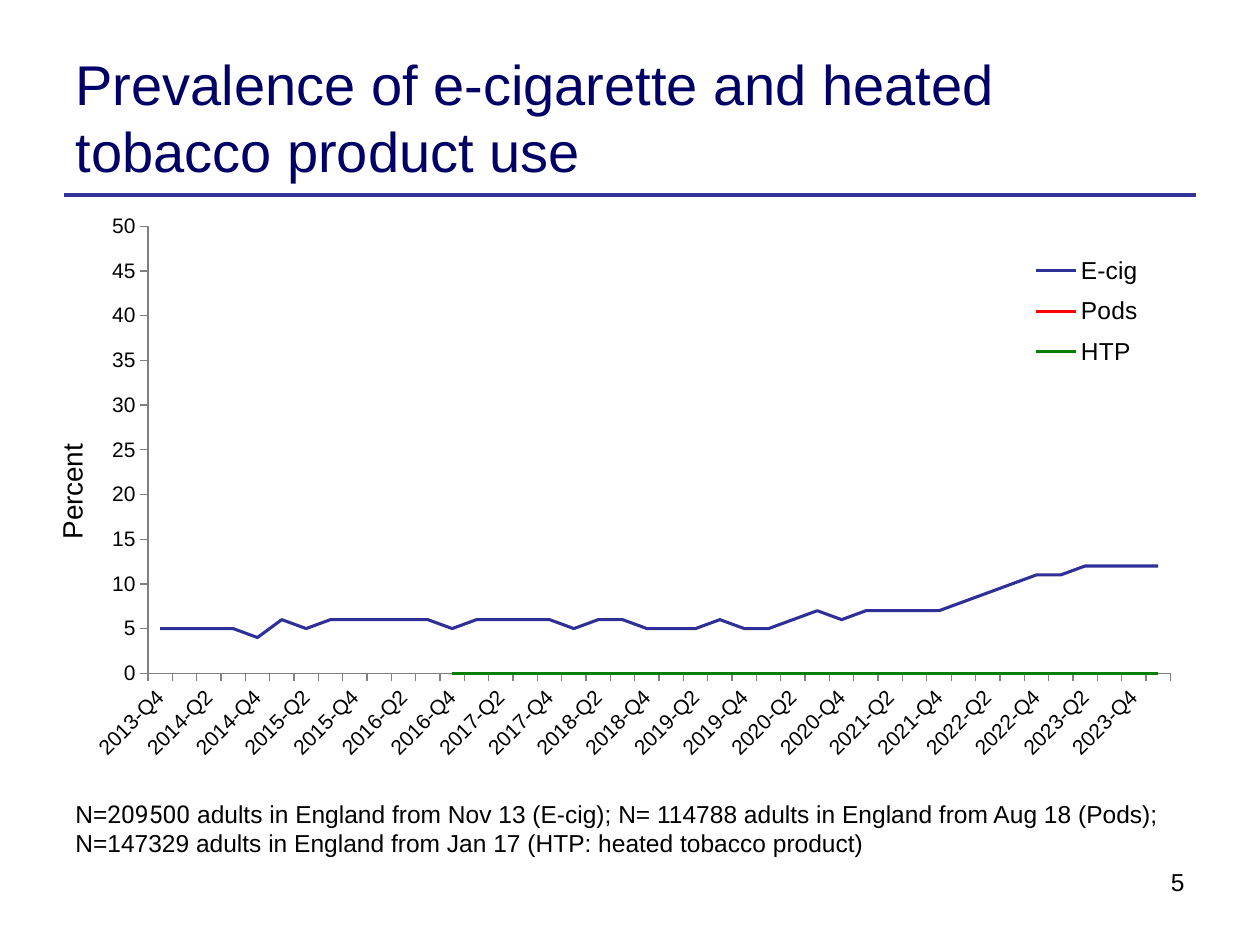
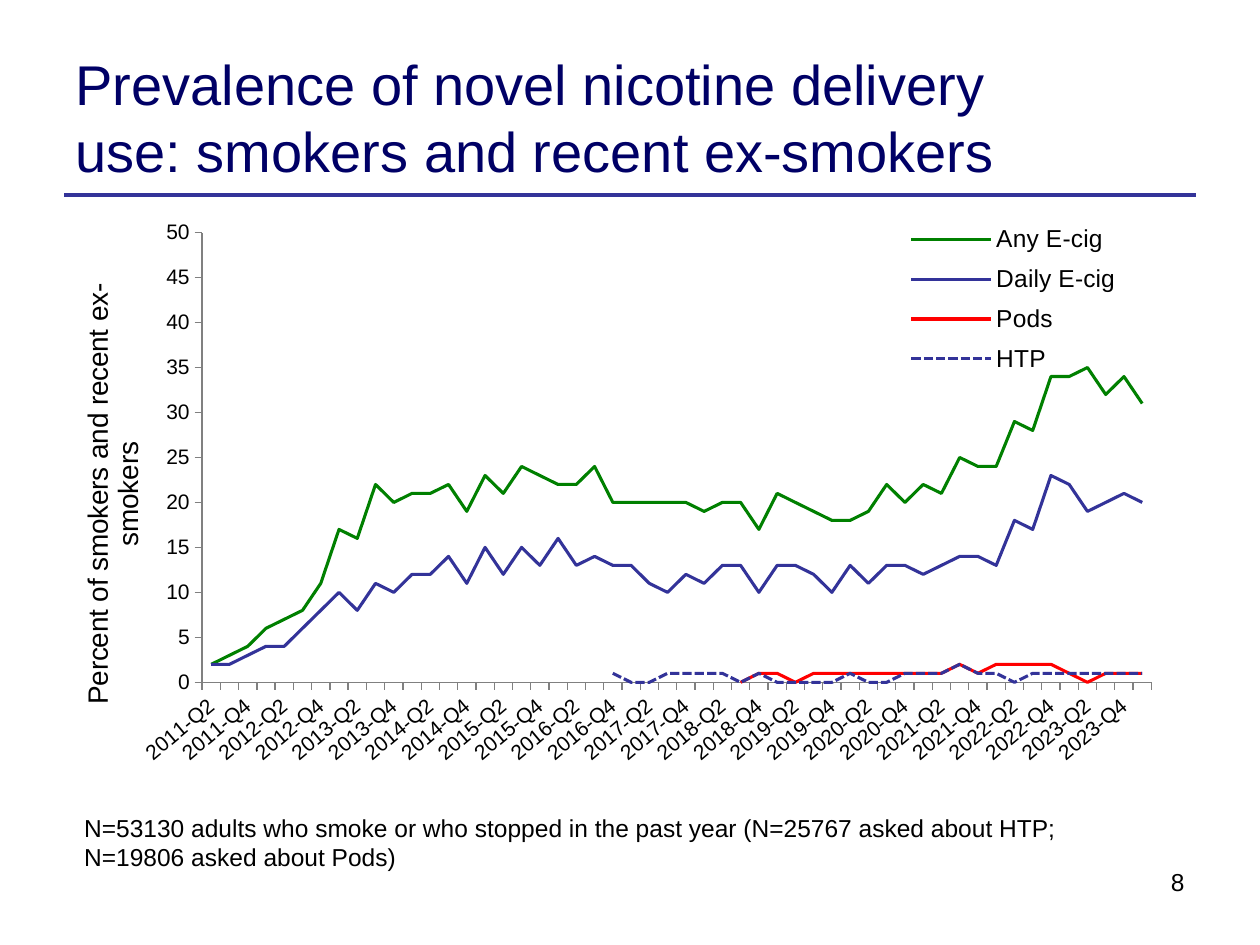
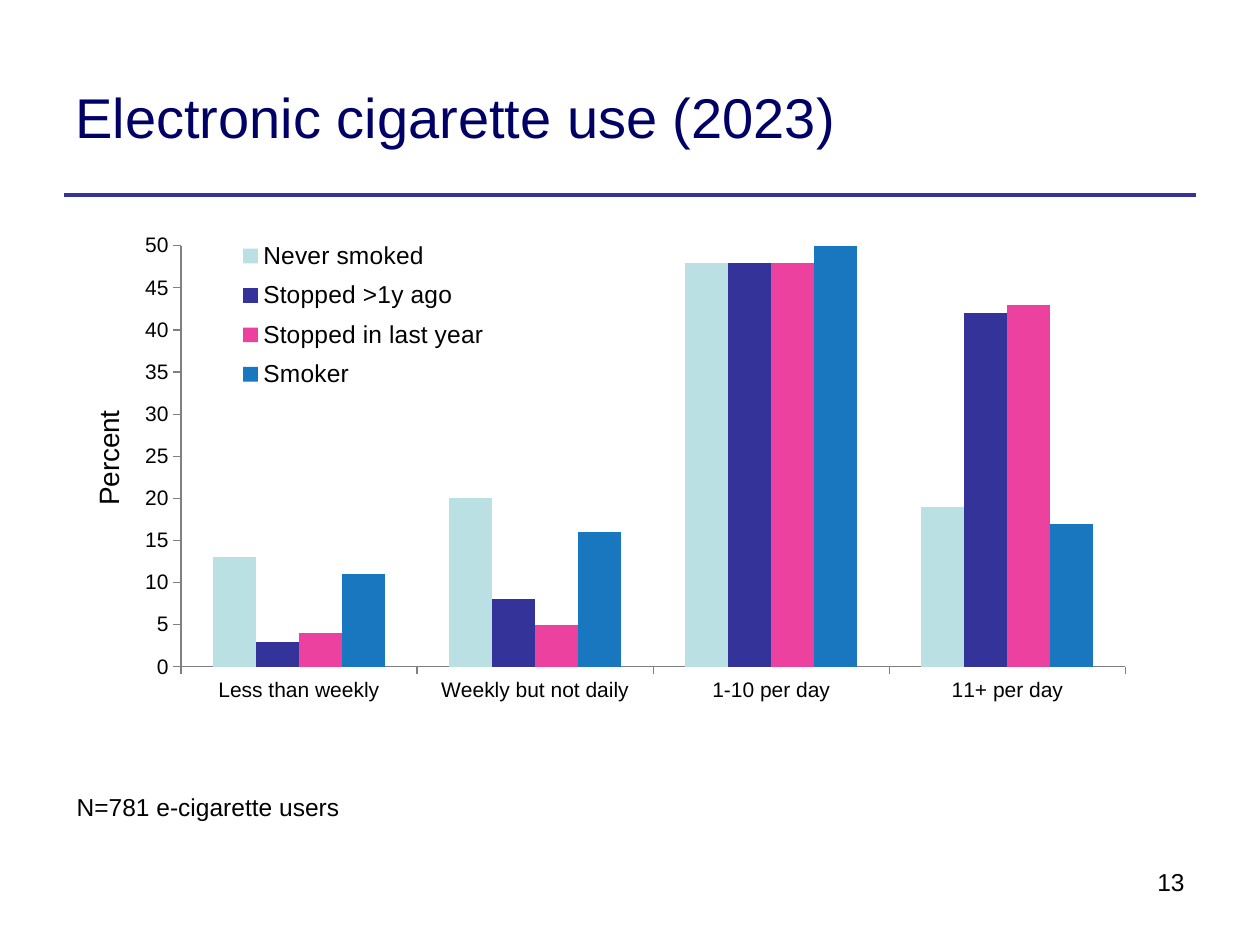
from dataclasses import dataclass

from pptx import Presentation
from pptx.chart.data import CategoryChartData
from pptx.dml.color import RGBColor
from pptx.enum.chart import XL_CHART_TYPE, XL_LEGEND_POSITION, XL_TICK_MARK
from pptx.enum.dml import MSO_LINE
from pptx.enum.shapes import MSO_CONNECTOR
from pptx.enum.text import MSO_ANCHOR, MSO_AUTO_SIZE, PP_ALIGN
from pptx.oxml.ns import qn
from pptx.oxml.xmlchemy import OxmlElement
from pptx.util import Pt


@dataclass(frozen=True)
class Theme:
    font: str = "Arial"
    figure_font: str = "Roboto"
    title: str = "000066"
    text: str = "000000"
    axis: str = "808080"
    indigo: str = "333399"
    deep_indigo: str = "2F2F98"
    red: str = "FF0000"
    green: str = "008000"
    pale_teal: str = "BBE0E3"
    pink: str = "EC419F"
    blue: str = "1977C0"
    title_size: float = 32
    chart_size: float = 18
    axis_title_size: float = 16
    body_size: float = 14
    tick_size: float = 12
    rule_width: float = 2.25
    series_width: float = 1.75


THEME = Theme()


@dataclass(frozen=True)
class Series:
    name: str
    values: list
    color: str
    dash: MSO_LINE = None


def rgb(color):
    return RGBColor.from_string(color)


def quarters(year, quarter, count):
    first = year * 4 + quarter - 1
    return [f"{n // 4}-Q{n % 4 + 1}" for n in range(first, first + count)]


def set_font(font, size, color=THEME.text, name=THEME.font):
    font.name = name
    font.size = Pt(size)
    font.bold = False
    font.color.rgb = rgb(color)


def write_text(frame, text, size=THEME.body_size, color=THEME.text, align=PP_ALIGN.LEFT):
    """Fill a frame; text is a string or a list of (text, font name) runs."""
    runs = [(text, THEME.font)] if isinstance(text, str) else text
    paragraph = frame.paragraphs[0]
    paragraph.alignment = align
    for words, name in runs:
        run = paragraph.add_run()
        run.text = words
        set_font(run.font, size, color, name)


def add_text(slide, box, text, wrap=True, **text_format):
    frame = slide.shapes.add_textbox(*map(Pt, box)).text_frame
    frame.word_wrap = wrap
    write_text(frame, text, **text_format)


def add_rule(slide):
    rule = slide.shapes.add_connector(
        MSO_CONNECTOR.STRAIGHT, Pt(36.7), Pt(111.6), Pt(683.3), Pt(111.6))
    rule.line.color.rgb = rgb(THEME.indigo)
    rule.line.width = Pt(THEME.rule_width)
    rule._element.spPr.append(OxmlElement("a:effectLst"))


def add_titled_slide(prs, title, number):
    slide = prs.slides.add_slide(prs.slide_layouts[5])
    heading = slide.shapes.title
    heading.left, heading.top, heading.width, heading.height = map(Pt, (36, 21.6, 568, 90))
    frame = heading.text_frame
    frame.vertical_anchor = MSO_ANCHOR.MIDDLE
    frame.auto_size = MSO_AUTO_SIZE.NONE
    write_text(frame, title, size=THEME.title_size, color=THEME.title)
    add_rule(slide)
    add_text(slide, (484.6, 491.8, 199.4, 37.4), str(number), align=PP_ALIGN.RIGHT)
    return slide


def place(part, index, inner=False, **fractions):
    """Give a chart part a manual layout, as its child number index."""
    old = part.find(qn("c:layout"))
    if old is not None:
        part.remove(old)
    layout = OxmlElement("c:layout")
    manual = OxmlElement("c:manualLayout")
    layout.append(manual)
    settings = {"layoutTarget": "inner"} if inner else {}
    settings |= {"xMode": "edge", "yMode": "edge"} | fractions
    for tag, value in settings.items():
        setting = OxmlElement(f"c:{tag}")
        setting.set("val", str(value))
        manual.append(setting)
    part.insert(index, layout)


def format_axis(axis):
    axis.has_major_gridlines = False
    axis.major_tick_mark = XL_TICK_MARK.OUTSIDE
    axis.minor_tick_mark = XL_TICK_MARK.NONE
    axis.format.line.color.rgb = rgb(THEME.axis)
    set_font(axis.tick_labels.font, THEME.tick_size)


def format_percent_axis(axis, title, title_at):
    format_axis(axis)
    axis.minimum_scale, axis.maximum_scale, axis.major_unit = 0, 50, 5
    write_text(axis.axis_title.text_frame, title,
               size=THEME.axis_title_size, align=PP_ALIGN.CENTER)
    heading = axis.axis_title._element
    body = heading.find(".//" + qn("a:bodyPr"))
    body.set("rot", "-5400000")
    body.set("vert", "horz")
    x, y = title_at
    place(heading, 1, x=x, y=y)


def slant_quarters(axis, degrees):
    """Slant the labels and show every second one."""
    body = axis._element.find(qn("c:txPr")).find(qn("a:bodyPr"))
    body.set("rot", str(-degrees * 60000))
    skip = OxmlElement("c:tickLblSkip")
    skip.set("val", "2")
    axis._element.find(qn("c:noMultiLvlLbl")).addprevious(skip)


def add_percent_chart(slide, kind, box, categories, series, axis_title, title_at, plot, legend):
    """Add a chart; title_at, plot and legend are fractions of its size."""
    data = CategoryChartData()
    data.categories = categories
    for entry in series:
        data.add_series(entry.name, entry.values)
    chart = slide.shapes.add_chart(kind, *map(Pt, box), data).chart
    chart.has_title = False
    set_font(chart.font, THEME.chart_size)
    format_axis(chart.category_axis)
    format_percent_axis(chart.value_axis, axis_title, title_at)

    chart.has_legend = True
    chart.legend.position = XL_LEGEND_POSITION.RIGHT
    chart.legend.include_in_layout = False
    set_font(chart.legend.font, THEME.body_size)
    place(chart.legend._element, 1, **dict(zip("xywh", legend)))
    place(chart._chartSpace.chart.plotArea, 0, inner=True, **dict(zip("xywh", plot)))
    chart.plots[0].vary_by_categories = False
    return chart


def add_trend_chart(slide, *, series, slant, **options):
    chart = add_percent_chart(slide, XL_CHART_TYPE.LINE, series=series, **options)
    slant_quarters(chart.category_axis, slant)
    for drawn, entry in zip(chart.plots[0].series, series):
        drawn.smooth = False
        drawn.format.line.color.rgb = rgb(entry.color)
        drawn.format.line.width = Pt(THEME.series_width)
        if entry.dash:
            drawn.format.line.dash_style = entry.dash


def add_group_chart(slide, *, series, **options):
    chart = add_percent_chart(slide, XL_CHART_TYPE.COLUMN_CLUSTERED, series=series, **options)
    chart.plots[0].gap_width = 150
    chart.plots[0].overlap = 0
    for drawn, entry in zip(chart.plots[0].series, series):
        drawn.invert_if_negative = False
        drawn.format.fill.solid()
        drawn.format.fill.fore_color.rgb = rgb(entry.color)


def add_adult_prevalence(prs):
    slide = add_titled_slide(prs, "Prevalence of e-cigarette and heated tobacco product use", 5)
    e_cig = [5, 5, 5, 5, 4, 6, 5, 6, 6, 6, 6, 6, 5, 6, 6, 6, 6, 5, 6, 6, 5,
             5, 5, 6, 5, 5, 6, 7, 6, 7, 7, 7, 7, 8, 9, 10, 11, 11, 12, 12, 12, 12]
    add_trend_chart(
        slide,
        box=(21.6, 111.6, 662.4, 348.5),
        categories=quarters(2013, 4, len(e_cig)),
        series=[
            Series("E-cig", e_cig, THEME.deep_indigo),
            Series("Pods", [None] * 19 + [0] * 23, THEME.red),
            Series("HTP", [None] * 12 + [0] * 30, THEME.green),
        ],
        slant=45,
        axis_title="Percent",
        title_at=(0.01, 0.4),
        plot=(0.095, 0.051, 0.882, 0.733),
        legend=(0.84, 0.08, 0.13, 0.22),
    )
    add_text(slide, (36, 452.9, 665.3, 41), [
        ("N=", THEME.font),
        ("209500", THEME.figure_font),
        (" adults in England from Nov 13 (E-cig); N= 114788 adults in England from Aug 18 (Pods); "
         "N=147329 adults in England from Jan 17 (HTP: heated tobacco product)", THEME.font),
    ])


def add_smoker_prevalence(prs):
    slide = add_titled_slide(
        prs, "Prevalence of novel nicotine delivery use: smokers and recent ex-smokers", 8)
    any_e_cig = [2, 3, 4, 6, 7, 8, 11, 17, 16, 22, 20, 21, 21, 22, 19, 23, 21, 24,
                 23, 22, 22, 24, 20, 20, 20, 20, 20, 19, 20, 20, 17, 21, 20, 19, 18,
                 18, 19, 22, 20, 22, 21, 25, 24, 24, 29, 28, 34, 34, 35, 32, 34, 31]
    daily_e_cig = [2, 2, 3, 4, 4, 6, 8, 10, 8, 11, 10, 12, 12, 14, 11, 15, 12, 15,
                   13, 16, 13, 14, 13, 13, 11, 10, 12, 11, 13, 13, 10, 13, 13, 12, 10,
                   13, 11, 13, 13, 12, 13, 14, 14, 13, 18, 17, 23, 22, 19, 20, 21, 20]
    pods = [0, 1, 1, 0, 1, 1, 1, 1, 1, 1, 1, 1, 2, 1, 2, 2, 2, 2, 1, 0, 1, 1, 1]
    htp = [1, 0, 0, 1, 1, 1, 1, 0, 1, 0, 0, 0, 0, 1, 0,
           0, 1, 1, 1, 2, 1, 1, 0, 1, 1, 1, 1, 1, 1, 1]
    add_trend_chart(
        slide,
        box=(36, 111.6, 662.4, 339.1),
        categories=quarters(2011, 2, len(any_e_cig)),
        series=[
            Series("Any E-cig", any_e_cig, THEME.green),
            Series("Daily E-cig", daily_e_cig, THEME.indigo),
            Series("Pods", [None] * 29 + pods, THEME.red),
            Series("HTP", [None] * 22 + htp, THEME.indigo, MSO_LINE.SQUARE_DOT),
        ],
        slant=40,
        axis_title="Percent of smokers and recent ex-smokers",
        title_at=(0.01, 0.14),
        plot=(0.12, 0.063, 0.819, 0.758),
        legend=(0.7, 0.03, 0.24, 0.29),
    )
    add_text(slide, (41, 460.8, 615.6, 58.3),
             "N=53130 adults who smoke or who stopped in the past year "
             "(N=25767 asked about HTP; N=19806 asked about Pods)")


def add_frequency_of_use(prs):
    slide = add_titled_slide(prs, "Electronic cigarette use (2023)", 13)
    add_group_chart(
        slide,
        box=(36, 125.3, 648, 322.6),
        categories=["Less than weekly", "Weekly but not daily", "1-10 per day", "11+ per day"],
        series=[
            Series("Never smoked", [13, 20, 48, 19], THEME.pale_teal),
            Series("Stopped >1y ago", [3, 8, 48, 42], THEME.indigo),
            Series("Stopped in last year", [4, 5, 48, 43], THEME.pink),
            Series("Smoker", [11, 16, 56, 17], THEME.blue),
        ],
        axis_title="Percent",
        title_at=(0.02, 0.33),
        plot=(0.104, 0.047, 0.833, 0.746),
        legend=(0.12, 0.02, 0.29, 0.3),
    )
    add_text(slide, (36.7, 449.3, 165.6, 24.5), "N=781 e-cigarette users", wrap=False)


def main():
    prs = Presentation()
    prs.slide_width, prs.slide_height = Pt(720), Pt(540)
    add_adult_prevalence(prs)
    add_smoker_prevalence(prs)
    add_frequency_of_use(prs)
    prs.save("out.pptx")


if __name__ == "__main__":
    main()
